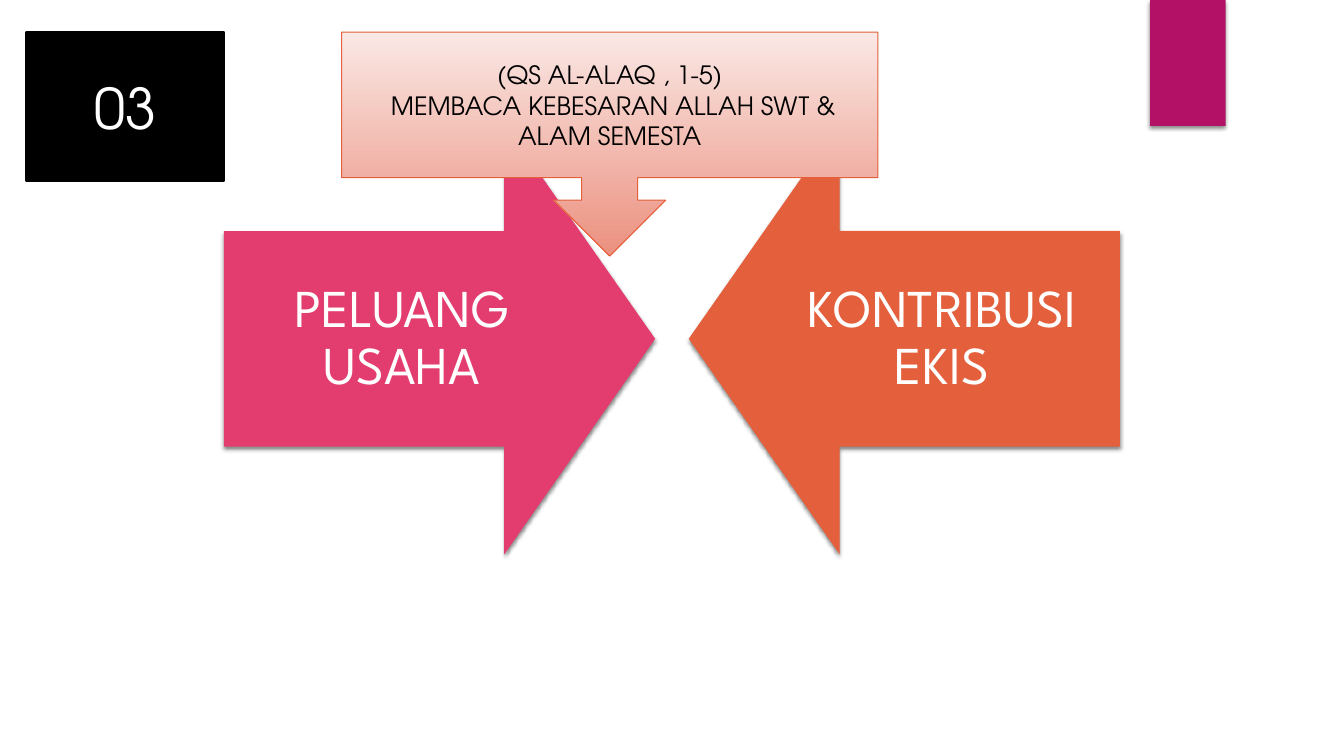
import pptx
import pptx.util
import pptx.dml.color
import pptx.enum.shapes
import pptx.enum.text
import lxml.etree

Pt = pptx.util.Pt
RGBColor = pptx.dml.color.RGBColor
Shape = pptx.enum.shapes.MSO_SHAPE

BLACK = RGBColor(0x00, 0x00, 0x00)
WHITE = RGBColor(0xFF, 0xFF, 0xFF)
MAGENTA = RGBColor(0xB3, 0x11, 0x66)
PINK = RGBColor(0xE3, 0x3D, 0x6F)
ORANGE = RGBColor(0xE4, 0x5F, 0x3C)
PALE_SALMON = RGBColor(0xFA, 0xE8, 0xE5)
SALMON = RGBColor(0xEB, 0x90, 0x7F)

HEADING_FONT = "League Spartan"
BODY_FONT = "TeX Gyre Adventor"
SHADOW = """<a:effectLst xmlns:a="http://schemas.openxmlformats.org/drawingml/2006/main">
<a:outerShdw blurRad="38100" dist="25400" dir="5400000" rotWithShape="0">
<a:srgbClr val="000000"><a:alpha val="45000"/></a:srgbClr></a:outerShdw></a:effectLst>"""


def add_block(kind, left, top, width, height, fill=None, shadow=False):
    """Add a borderless preset shape, with a soft shadow below it if asked."""
    block = slide.shapes.add_shape(kind, Pt(left), Pt(top), Pt(width), Pt(height))
    block.shadow.inherit = False
    block.line.fill.background()
    if fill is not None:
        block.fill.solid()
        block.fill.fore_color.rgb = fill
    if shadow:
        properties = block.fill._xPr
        empty_effects = properties.find("{*}effectLst")
        properties.replace(empty_effects, lxml.etree.fromstring(SHADOW))
    return block


def write_text(holder, text, font=BODY_FONT, size=18, color=BLACK, spacing=1.0, inset=None):
    frame = holder.text_frame
    frame.word_wrap = True
    frame.vertical_anchor = pptx.enum.text.MSO_ANCHOR.MIDDLE
    if inset is not None:
        frame.margin_left = frame.margin_right = Pt(inset)
        frame.margin_top = frame.margin_bottom = Pt(inset)
    frame.text = text
    for paragraph in frame.paragraphs:
        paragraph.alignment = pptx.enum.text.PP_ALIGN.CENTER
        paragraph.line_spacing = spacing
        paragraph.font.name = font
        paragraph.font.size = Pt(size)
        paragraph.font.color.rgb = color


presentation = pptx.Presentation()
presentation.slide_width = Pt(960)
presentation.slide_height = Pt(540)
slide = presentation.slides.add_slide(presentation.slide_layouts[6])

add_block(Shape.RECTANGLE, 821.5, 0, 54, 90, MAGENTA, shadow=True)

# Two arrows pointing at each other, each with its label on the shaft
for label, arrow_left, label_left, rotation, color in [
    ("PELUANG USAHA", 160, 160, 270, PINK),
    ("KONTRIBUSI EKIS", 492, 546, 90, ORANGE),
]:
    arrow = add_block(Shape.DOWN_ARROW, arrow_left, 88, 308, 308, color, shadow=True)
    arrow.rotation = rotation
    arrow.adjustments[0] = 0.5
    arrow.adjustments[1] = 0.35
    label_box = slide.shapes.add_textbox(Pt(label_left), Pt(165), Pt(254), Pt(154))
    write_text(label_box, label, font=HEADING_FONT, size=38, color=WHITE,
               spacing=0.9, inset=21.6)

verse = add_block(Shape.DOWN_ARROW_CALLOUT, 244, 23, 383, 160)
verse.fill.gradient()
verse.fill.gradient_angle = 270
for stop, position, color in zip(verse.fill.gradient_stops, (0, 1), (PALE_SALMON, SALMON)):
    stop.position = position
    stop.color.rgb = color
verse.line.color.rgb = ORANGE
verse.line.width = Pt(0.75)
write_text(verse, "(QS AL-ALAQ , 1-5)\n MEMBACA KEBESARAN ALLAH SWT & ALAM SEMESTA")

number = add_block(Shape.RECTANGLE, 19, 23, 141, 106.5, BLACK)
number.line.color.rgb = BLACK
number.line.width = Pt(1.5)
write_text(number, "03", size=40, color=WHITE)

presentation.save("out.pptx")
